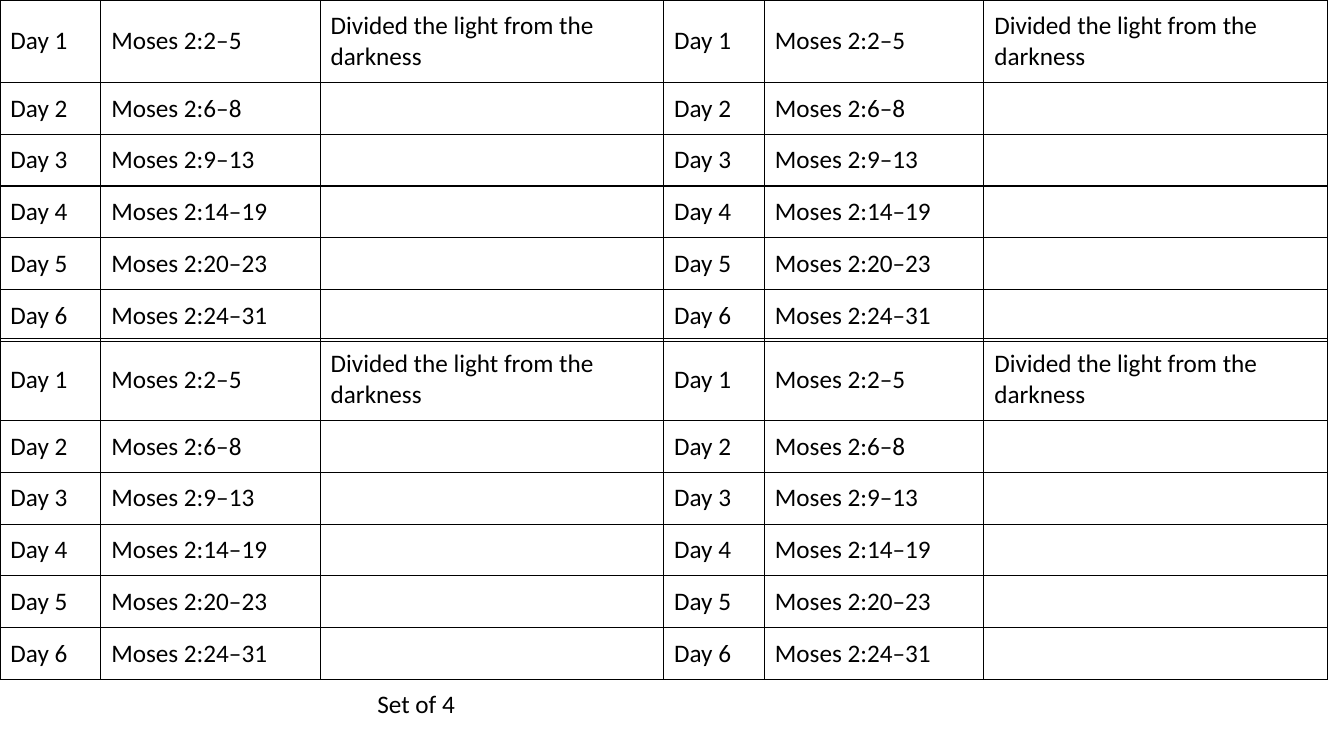
from lxml.etree import SubElement
from pptx import Presentation
from pptx.dml.color import RGBColor
from pptx.enum.text import MSO_ANCHOR, MSO_AUTO_SIZE
from pptx.oxml.ns import qn
from pptx.util import Pt

DAYS = [
    ("Day 1", "Moses 2:2–5", "Divided the light from the darkness"),
    ("Day 2", "Moses 2:6–8", ""),
    ("Day 3", "Moses 2:9–13", ""),
    ("Day 4", "Moses 2:14–19", ""),
    ("Day 5", "Moses 2:20–23", ""),
    ("Day 6", "Moses 2:24–31", ""),
]
CAPTION = "Set of 4"
COLORS = {"ink": "000000"}
FONT = "Calibri"

EMU_PER_PX = 9525
SLIDE_SIZE = (1280, 720)
COLUMN_WIDTHS = (96, 209, 327)
ROW_HEIGHTS = (69, 43, 43, 43, 43, 43)
HANDOUT_WIDTH = sum(COLUMN_WIDTHS)
HANDOUT_HEIGHT = 322
CELL_MARGIN = 10
CAPTION_BOX = (350, 651, 94, 38)


def px(length):
    return length * EMU_PER_PX


def write(frame, text, size=18, color="ink", wrap=True):
    frame.word_wrap = wrap
    paragraph = frame.paragraphs[0]
    paragraph.font.size = Pt(size)
    if text:
        run = paragraph.add_run()
        run.text = text
        run.font.size = Pt(size)
        run.font.name = FONT
        run.font.bold = False
        run.font.color.rgb = RGBColor.from_string(COLORS[color])


def draw_borders(cell, color="ink", width=1):
    properties = cell._tc.get_or_add_tcPr()
    for side in ("a:lnL", "a:lnR", "a:lnT", "a:lnB"):
        border = SubElement(properties, qn(side), w=str(Pt(width)))
        fill = SubElement(border, qn("a:solidFill"))
        SubElement(fill, qn("a:srgbClr"), val=COLORS[color])


def add_handout(slide, left, top):
    handout = slide.shapes.add_table(
        len(DAYS), len(COLUMN_WIDTHS),
        px(left), px(top), px(HANDOUT_WIDTH), px(HANDOUT_HEIGHT))
    grid = handout.table
    grid.first_row = False
    grid.horz_banding = False
    for column, width in zip(grid.columns, COLUMN_WIDTHS):
        column.width = px(width)
    for row, height, day in zip(grid.rows, ROW_HEIGHTS, DAYS):
        row.height = px(height)
        for cell, text in zip(row.cells, day):
            draw_borders(cell)
            cell.fill.background()
            cell.vertical_anchor = MSO_ANCHOR.MIDDLE
            cell.margin_left = cell.margin_right = px(CELL_MARGIN)
            cell.margin_top = cell.margin_bottom = px(CELL_MARGIN)
            write(cell.text_frame, text)
    handout.height = px(HANDOUT_HEIGHT)


def main():
    deck = Presentation()
    deck.slide_width, deck.slide_height = map(px, SLIDE_SIZE)
    slide = deck.slides.add_slide(deck.slide_layouts[6])
    for down in range(2):
        for across in range(2):
            add_handout(slide, across * HANDOUT_WIDTH, down * HANDOUT_HEIGHT)
    caption = slide.shapes.add_textbox(*map(px, CAPTION_BOX)).text_frame
    write(caption, CAPTION, wrap=False)
    caption.auto_size = MSO_AUTO_SIZE.SHAPE_TO_FIT_TEXT
    deck.save("out.pptx")


if __name__ == "__main__":
    main()
